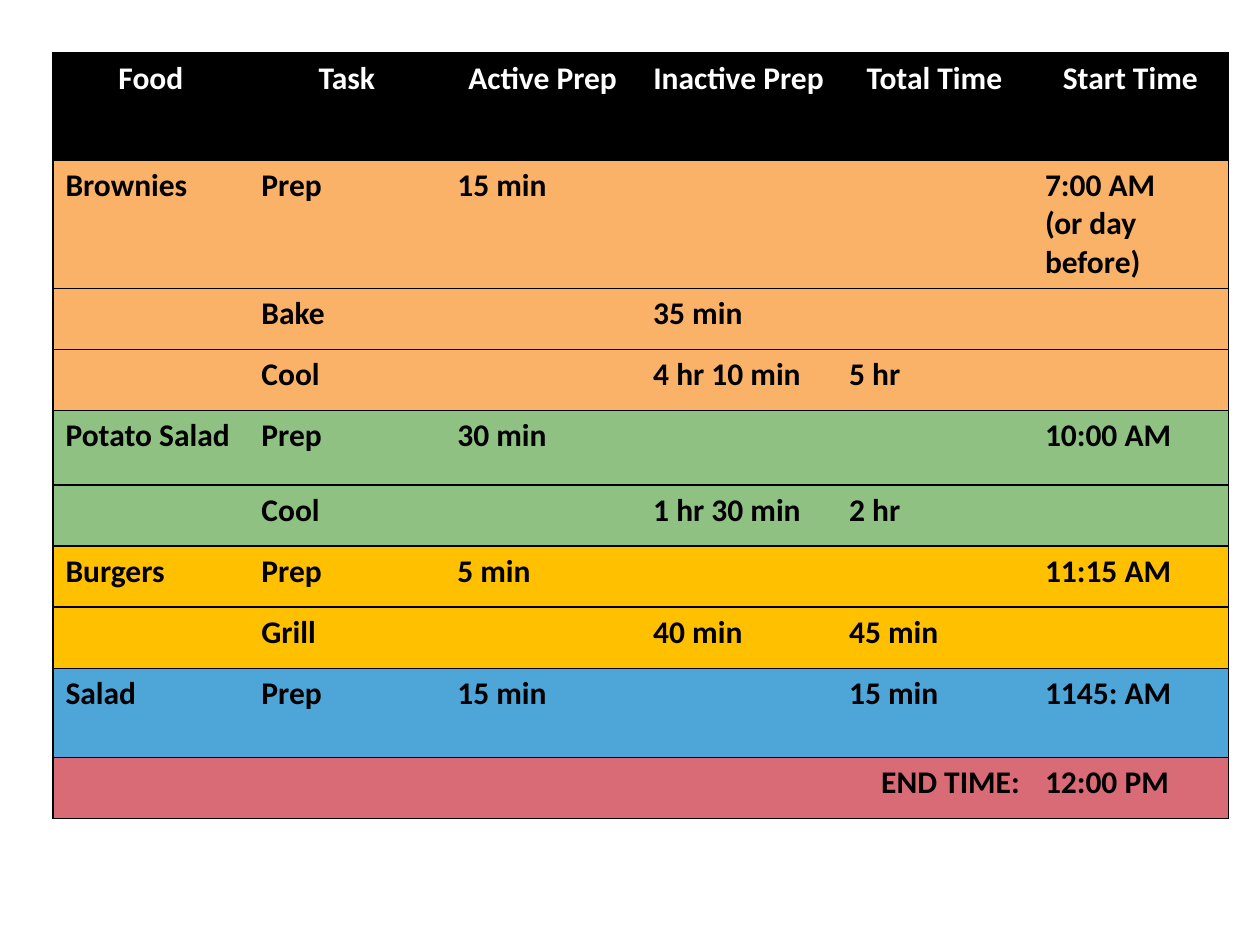
import lxml.etree
import pptx
import pptx.dml.color
import pptx.enum.text
import pptx.oxml.ns
import pptx.util

Inches = pptx.util.Inches
Pt = pptx.util.Pt
RGBColor = pptx.dml.color.RGBColor
ALIGN = pptx.enum.text.PP_ALIGN

BLACK = RGBColor(0x00, 0x00, 0x00)
WHITE = RGBColor(0xFF, 0xFF, 0xFF)
ORANGE = RGBColor(0xF9, 0xB2, 0x68)
GREEN = RGBColor(0x8E, 0xC1, 0x82)
YELLOW = RGBColor(0xFF, 0xC0, 0x00)
BLUE = RGBColor(0x4E, 0xA5, 0xD8)
RED = RGBColor(0xD9, 0x6B, 0x77)

BORDER_WIDTH = Pt(0.79)
ROW_HEIGHT = 0.485

# Each row: fill, height in inches, cell texts
SCHEDULE = [
    (BLACK, 0.85, ["Food", "Task", "Active Prep", "Inactive Prep", "Total Time", "Start Time"]),
    (ORANGE, 1.02, ["Brownies", "Prep", "15 min", "", "", "7:00 AM\n(or day before)"]),
    (ORANGE, ROW_HEIGHT, ["", "Bake", "", "35 min", "", ""]),
    (ORANGE, ROW_HEIGHT, ["", "Cool", "", "4 hr 10 min", "5 hr", ""]),
    (GREEN, 0.59, ["Potato Salad", "Prep", "30 min", "", "", "10:00 AM"]),
    (GREEN, ROW_HEIGHT, ["", "Cool", "", "1 hr 30 min", "2 hr", ""]),
    (YELLOW, ROW_HEIGHT, ["Burgers", "Prep", "5 min", "", "", "11:15 AM"]),
    (YELLOW, ROW_HEIGHT, ["", "Grill", "", "40 min", "45 min", ""]),
    (BLUE, 0.71, ["Salad", "Prep", "15 min", "", "15 min", "1145: AM"]),
    (RED, ROW_HEIGHT, ["", "", "", "", "END TIME:", "12:00 PM"]),
]


def set_borders(cell, visible_sides):
    """Draw the named sides (L, R, T, B) in black and clear the others."""
    qualified = pptx.oxml.ns.qn
    properties = cell._tc.get_or_add_tcPr()
    for position, side in enumerate("LRTB"):
        line = lxml.etree.Element(qualified("a:ln" + side), w=str(BORDER_WIDTH))
        if side in visible_sides:
            fill = lxml.etree.SubElement(line, qualified("a:solidFill"))
            lxml.etree.SubElement(fill, qualified("a:srgbClr"), val=str(BLACK))
        else:
            lxml.etree.SubElement(line, qualified("a:noFill"))
        properties.insert(position, line)


def fill_cell(cell, text, background, color, alignment):
    cell.fill.solid()
    cell.fill.fore_color.rgb = background
    cell.text = text
    font_format = {"name": "Calibri", "size": Pt(18), "bold": True}
    for paragraph in cell.text_frame.paragraphs:
        paragraph.alignment = alignment
        for name, value in font_format.items():
            setattr(paragraph.font, name, value)
        for run in paragraph.runs:
            for name, value in font_format.items():
                setattr(run.font, name, value)
            run.font.color.rgb = color


def add_schedule(slide, left, top, width, height):
    column_count = len(SCHEDULE[0][2])
    table = slide.shapes.add_table(
        len(SCHEDULE), column_count, left, top, width, height).table
    table.horz_banding = False
    for column in table.columns:
        column.width = int(width / column_count)

    for row_index, (background, row_height, texts) in enumerate(SCHEDULE):
        table.rows[row_index].height = Inches(row_height)
        is_header = row_index == 0
        for column_index, text in enumerate(texts):
            cell = table.cell(row_index, column_index)
            if is_header:
                alignment = ALIGN.CENTER
            elif text == "END TIME:":
                alignment = ALIGN.RIGHT
            else:
                alignment = ALIGN.LEFT
            fill_cell(cell, text, background, WHITE if is_header else BLACK, alignment)
            sides = "TB"
            if column_index == 0:
                sides += "L"
            if column_index == column_count - 1:
                sides += "R"
            set_borders(cell, sides)


def main():
    presentation = pptx.Presentation()
    presentation.slide_width = Inches(10)
    presentation.slide_height = Inches(7.5)
    slide = presentation.slides.add_slide(presentation.slide_layouts[6])
    total_height = sum(row_height for _, row_height, _ in SCHEDULE)
    add_schedule(slide, Inches(0.42), Inches(0.42), Inches(9.33), Inches(total_height))
    presentation.save("out.pptx")


if __name__ == "__main__":
    main()
